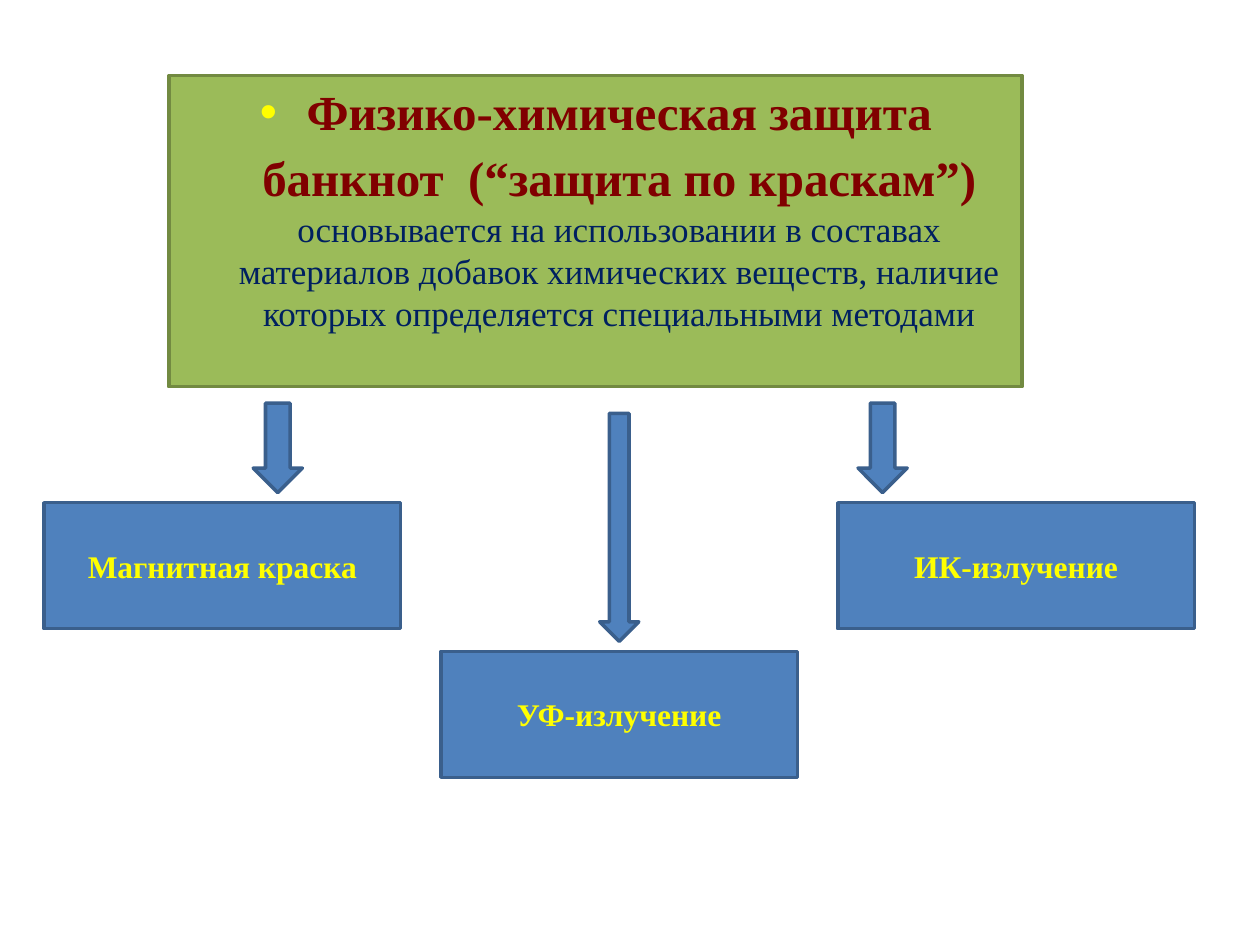
import pptx
import pptx.dml.color
import pptx.enum.shapes
import pptx.enum.text
import pptx.util
import lxml.etree
from pptx.util import Inches

SHAPE = pptx.enum.shapes.MSO_SHAPE
ANCHOR = pptx.enum.text.MSO_ANCHOR
SERIF = "Times New Roman"
BLUE, NAVY = "4F81BD", "3A5F8C"
GREEN, OLIVE = "9BBB59", "728A41"
YELLOW, MAROON, INK = "FFFF00", "800000", "002060"


def color(code):
    """Turn a hex string into a colour."""
    return pptx.dml.color.RGBColor.from_string(code)


def add_form(slide, kind, place, fill=BLUE, line=NAVY):
    """Add a filled and outlined shape at left, top, width, height."""
    form = slide.shapes.add_shape(kind, *map(Inches, place))
    form.shadow.inherit = False
    form.fill.solid()
    form.fill.fore_color.rgb = color(fill)
    form.line.color.rgb = color(line)
    form.line.width = pptx.util.Pt(2)
    return form


def add_text(form, runs, anchor):
    """Write a centred paragraph of (text, size, font, colour, bold) runs."""
    frame = form.text_frame
    frame.word_wrap = True
    frame.vertical_anchor = anchor
    para = frame.paragraphs[0]
    para.alignment = pptx.enum.text.PP_ALIGN.CENTER
    for text, size, name, code, bold in runs:
        run = para.add_run()
        run.text = text
        run.font.size = pptx.util.Pt(size)
        run.font.name = name
        run.font.color.rgb = color(code)
        run.font.bold = bold
    return para


def add_bullet(para, code):
    """Give a paragraph a coloured bullet and a hanging indent."""
    props = para._p.get_or_add_pPr()
    props.set("marL", str(Inches(0.38)))
    props.set("indent", str(Inches(-0.37)))
    tag = pptx.oxml.ns.qn
    tint = lxml.etree.SubElement(props, tag("a:buClr"))
    lxml.etree.SubElement(tint, tag("a:srgbClr"), val=code)
    lxml.etree.SubElement(props, tag("a:buFont"), typeface="Arial")
    lxml.etree.SubElement(props, tag("a:buChar"), char="•")


def add_head(slide):
    """Add the green box with the definition."""
    box = add_form(slide, SHAPE.RECTANGLE, (1.34, 0.6, 6.77, 2.47), GREEN, OLIVE)
    runs = [
        ("Физико-химическая защита банкнот  (“защита по краскам”)",
         28, SERIF, MAROON, True),
        (" ", 32, "Calibri", YELLOW, False),
        ("основывается на использовании в составах материалов добавок "
         "химических веществ, наличие которых определяется специальными методами",
         20, SERIF, INK, False),
    ]
    add_bullet(add_text(box, runs, ANCHOR.TOP), YELLOW)


def main():
    """Build the slide and save it."""
    deck = pptx.Presentation()
    deck.slide_width, deck.slide_height = Inches(10), Inches(7.5)
    slide = deck.slides.add_slide(deck.slide_layouts[6])
    add_head(slide)
    labels = [("Магнитная краска", 3.99), ("УФ-излучение", 5.17),
              ("ИК-излучение", 3.99)]
    for col, (label, top) in enumerate(labels):
        box = add_form(slide, SHAPE.RECTANGLE, (0.35 + 3.15 * col, top, 2.83, 1))
        add_text(box, [(label, 18, SERIF, YELLOW, True)], ANCHOR.MIDDLE)
    for place in [(2.01, 3.2, 0.39, 0.71), (6.81, 3.2, 0.39, 0.71),
                  (4.76, 3.28, 0.31, 1.81)]:
        add_form(slide, SHAPE.DOWN_ARROW, place)
    deck.save("out.pptx")


if __name__ == "__main__":
    main()
